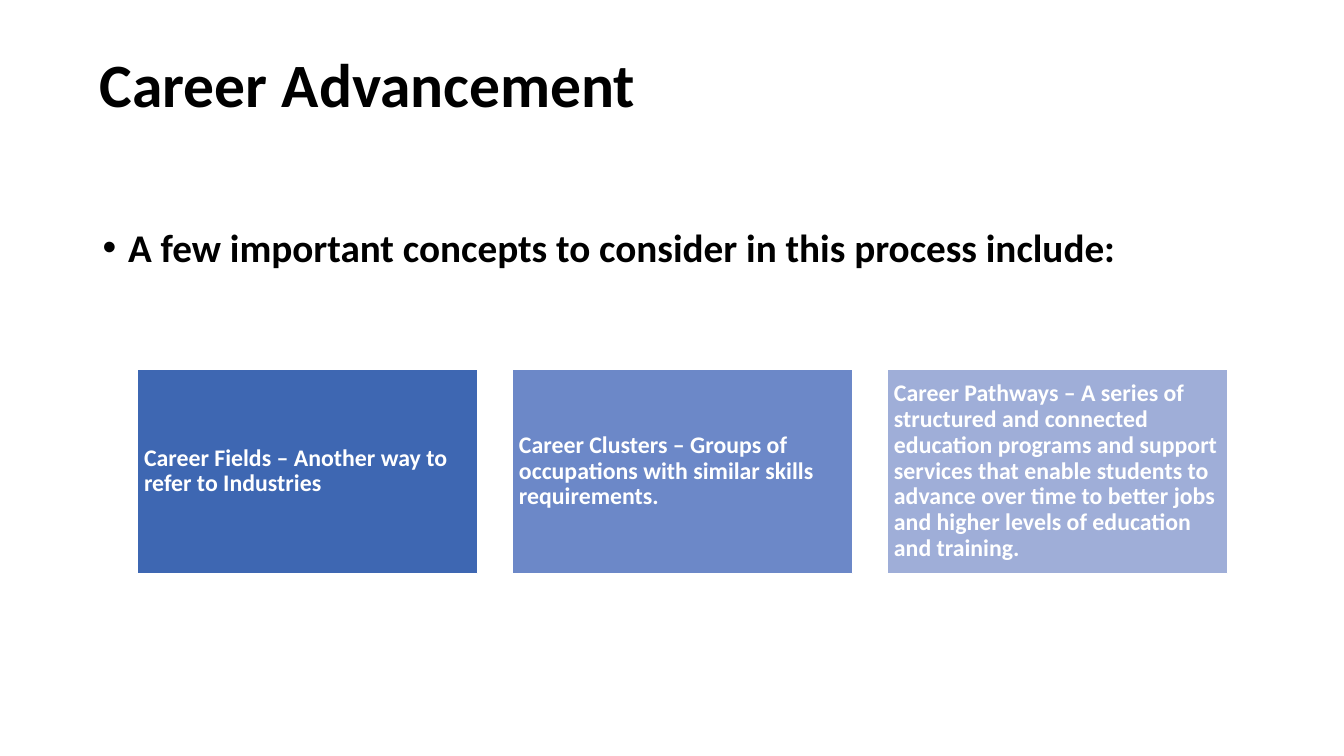
from dataclasses import dataclass

from lxml.etree import SubElement
from pptx import Presentation
from pptx.dml.color import RGBColor
from pptx.enum.shapes import MSO_SHAPE
from pptx.enum.text import MSO_ANCHOR, PP_ALIGN
from pptx.oxml.ns import qn
from pptx.util import Cm, Pt

# Content
TITLE = "Career Advancement"
LEAD = "A few important concepts to consider in this process include:"
CARDS = [
    ("Career Fields – Another way to refer to Industries", "3E67B2"),
    ("Career Clusters – Groups of occupations with similar skills requirements.", "6C88C8"),
    ("Career Pathways – A series of structured and connected education programs "
     "and support services that enable students to advance over time to better "
     "jobs and higher levels of education and training.", "9FAED8"),
]


@dataclass(frozen=True)
class Theme:
    font: str = "Calibri"
    ink: str = "000000"
    pale: str = "FFFFFF"
    title: int = 44
    lead: int = 28
    card: int = 17


THEME = Theme()

# Layout in centimetres
LEFT, TOP, WIDE, HIGH = 3.45, 9.3, 8.59, 5.16
STEP = 9.45
INSET = 0.18


def write(frame, text, size, color, anchor):
    frame.word_wrap = True
    frame.vertical_anchor = anchor
    para = frame.paragraphs[0]
    para.text = text
    para.alignment = PP_ALIGN.LEFT
    font = para.font
    font.name, font.size, font.bold = THEME.font, Pt(size), True
    font.color.rgb = RGBColor.from_string(color)
    return para


def add_bullet(para, indent):
    props = para._p.get_or_add_pPr()
    props.set("marL", str(indent))
    props.set("indent", str(-indent))
    mark = SubElement(props, qn("a:buFont"))
    mark.set("typeface", "Arial")
    SubElement(props, qn("a:buChar")).set("char", "•")
    # Bullet elements come before the default run properties
    props.append(props.find(qn("a:defRPr")))


def add_card(slide, index, text, color):
    card = slide.shapes.add_shape(
        MSO_SHAPE.RECTANGLE, Cm(LEFT + index * STEP), Cm(TOP), Cm(WIDE), Cm(HIGH))
    card.shadow.inherit = False
    card.fill.solid()
    card.fill.fore_color.rgb = RGBColor.from_string(color)
    card.line.color.rgb = RGBColor.from_string(THEME.pale)
    card.line.width = Pt(1)
    frame = card.text_frame
    frame.margin_left = frame.margin_right = Cm(INSET)
    frame.margin_top = frame.margin_bottom = Cm(INSET)
    para = write(frame, text, THEME.card, THEME.pale, MSO_ANCHOR.MIDDLE)
    para.line_spacing = 0.9


def main():
    deck = Presentation()
    deck.slide_width, deck.slide_height = Cm(33.87), Cm(19.05)
    slide = deck.slides.add_slide(deck.slide_layouts[5])

    # Title
    title = slide.shapes.title
    title.left, title.top = Cm(2.26), Cm(0.36)
    title.width, title.height = Cm(29.21), Cm(3.68)
    para = write(title.text_frame, TITLE, THEME.title, THEME.ink, MSO_ANCHOR.MIDDLE)
    para.line_spacing = 0.9

    # Lead line
    lead = slide.shapes.add_textbox(Cm(2.34), Cm(5.51), Cm(29.21), Cm(12.09))
    para = write(lead.text_frame, LEAD, THEME.lead, THEME.ink, MSO_ANCHOR.TOP)
    para.space_after = Pt(6)
    add_bullet(para, Cm(0.64))

    # Concept cards
    for index, (text, color) in enumerate(CARDS):
        add_card(slide, index, text, color)

    deck.save("out.pptx")


if __name__ == "__main__":
    main()
